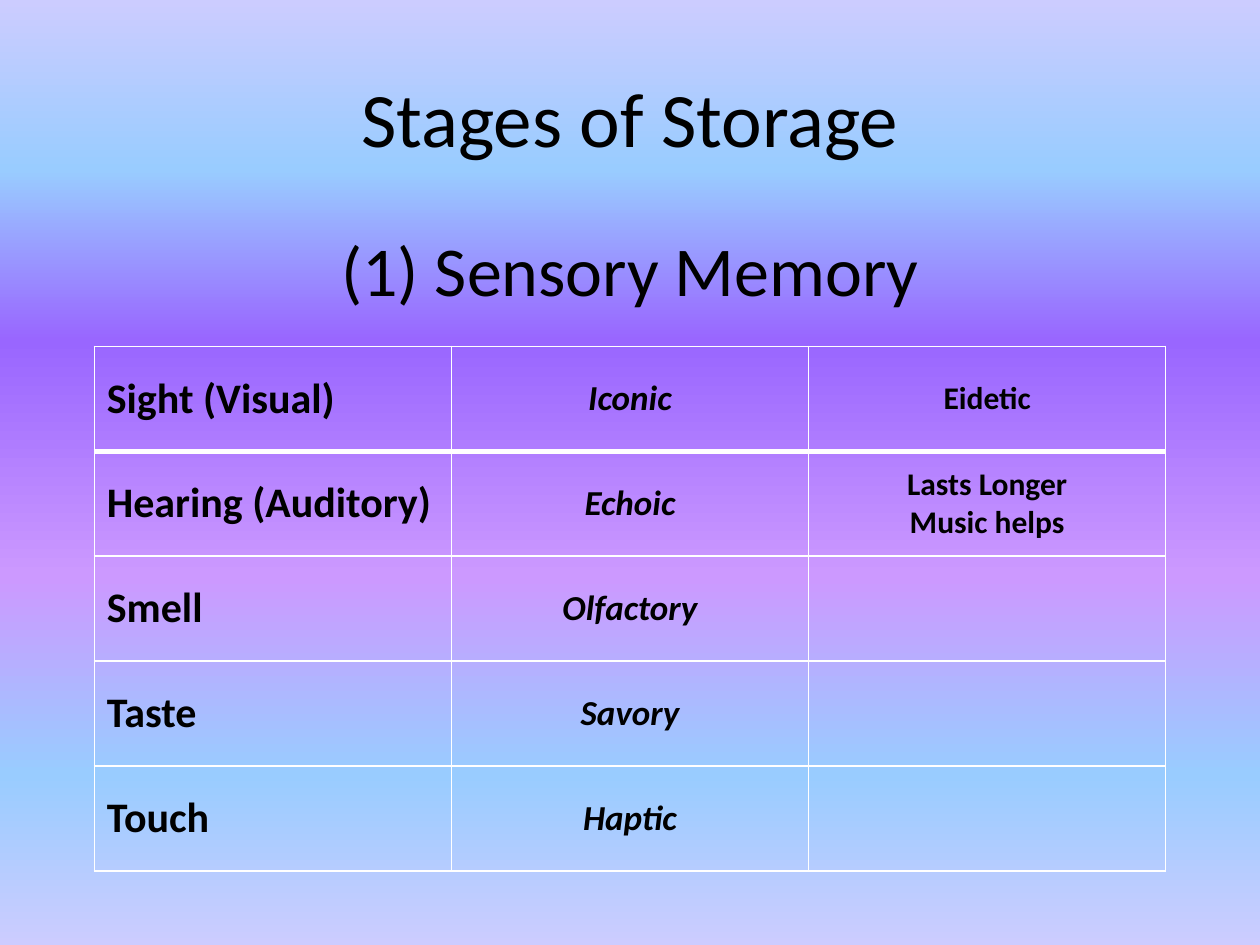
import pptx
import pptx.dml.color
import pptx.enum.text
import pptx.oxml
import pptx.oxml.ns
import pptx.util
from lxml import etree
from pptx.util import Cm

ALIGN = pptx.enum.text.PP_ALIGN
MIDDLE = pptx.enum.text.MSO_ANCHOR.MIDDLE
qn = pptx.oxml.ns.qn

# Content
TITLE = "Stages of Storage"
SUBTITLE = "(1) Sensory Memory"
SENSES = [
    ("Sight (Visual)", "Iconic", "Eidetic"),
    ("Hearing (Auditory)", "Echoic", "Lasts Longer\nMusic helps"),
    ("Smell", "Olfactory", ""),
    ("Taste", "Savory", ""),
    ("Touch", "Haptic", ""),
]

# Theme
THEME = {
    "font": "Calibri",
    "text": "000000",
    "border": "FFFFFF",
    "thin": 1,
    "thick": 3,
    "gradient": [(0, "CCCCFF"), (18, "99CCFF"), (36, "9966FF"),
                 (61, "CC99FF"), (82, "99CCFF"), (100, "CCCCFF")],
    "title": {"size": 44},
    "subtitle": {"size": 40},
    "columns": [
        {"size": 24, "bold": True, "alignment": ALIGN.LEFT},
        {"size": 20, "bold": True, "italic": True},
        {"size": 18, "bold": True},
    ],
}

# Positions: left, top, width, height
TITLE_BOX = (Cm(1.27), Cm(0.76), Cm(22.86), Cm(3.18))
SUBTITLE_BOX = (Cm(1.27), Cm(4.45), Cm(22.86), Cm(12.57))
TABLE_BOX = (Cm(1.9), Cm(6.98), Cm(21.6), Cm(10.58))


def write_text(text_frame, text, style):
    text_frame.text = text
    font_values = {"name": THEME["font"], "bold": False, "italic": False, **style}
    alignment = font_values.pop("alignment", ALIGN.CENTER)
    font_values["size"] = pptx.util.Pt(font_values["size"])
    for paragraph in text_frame.paragraphs:
        paragraph.alignment = alignment
        for name, value in font_values.items():
            setattr(paragraph.font, name, value)
        for run in paragraph.runs:
            for name, value in font_values.items():
                setattr(run.font, name, value)
            run.font.color.rgb = pptx.dml.color.RGBColor.from_string(THEME["text"])


def add_colour(parent, colour):
    return etree.SubElement(parent, qn("a:srgbClr"), val=colour)


def paint_background(slide):
    fill = slide.background.fill
    fill.gradient()
    fill.gradient_angle = 270
    stops = next(slide.element.iter(qn("a:gsLst")))
    for stop in list(stops):
        stops.remove(stop)
    for position, colour in THEME["gradient"]:
        add_colour(etree.SubElement(stops, qn("a:gs"), pos=str(position * 1000)), colour)


def draw_borders(cell, widths):
    properties = cell._tc.get_or_add_tcPr()
    for side, width in widths.items():
        line = etree.SubElement(properties, qn(f"a:ln{side}"), w=str(pptx.util.Pt(width)))
        add_colour(etree.SubElement(line, qn("a:solidFill")), THEME["border"])


def add_senses_table(slide):
    table = slide.shapes.add_table(len(SENSES), len(SENSES[0]), *TABLE_BOX).table
    table.first_row = table.horz_banding = False
    thin, thick = THEME["thin"], THEME["thick"]
    for row_index, row in enumerate(SENSES):
        # The heavy rule lies between the first two rows
        widths = {"L": thin, "R": thin,
                  "T": thick if row_index == 1 else thin,
                  "B": thick if row_index == 0 else thin}
        for column_index, text in enumerate(row):
            cell = table.cell(row_index, column_index)
            cell.vertical_anchor = MIDDLE
            write_text(cell.text_frame, text, THEME["columns"][column_index])
            draw_borders(cell, widths)
            cell.fill.background()


def main():
    presentation = pptx.Presentation()
    presentation.slide_width, presentation.slide_height = Cm(25.4), Cm(19.05)
    slide = presentation.slides.add_slide(presentation.slide_layouts[5])
    paint_background(slide)

    # Title
    title = slide.shapes.title
    title.left, title.top, title.width, title.height = TITLE_BOX
    title.text_frame.vertical_anchor = MIDDLE
    write_text(title.text_frame, TITLE, THEME["title"])

    # Subtitle
    subtitle = slide.shapes.add_textbox(*SUBTITLE_BOX)
    subtitle.text_frame.word_wrap = True
    write_text(subtitle.text_frame, SUBTITLE, THEME["subtitle"])

    # Table of senses
    add_senses_table(slide)
    presentation.save("out.pptx")


if __name__ == "__main__":
    main()
